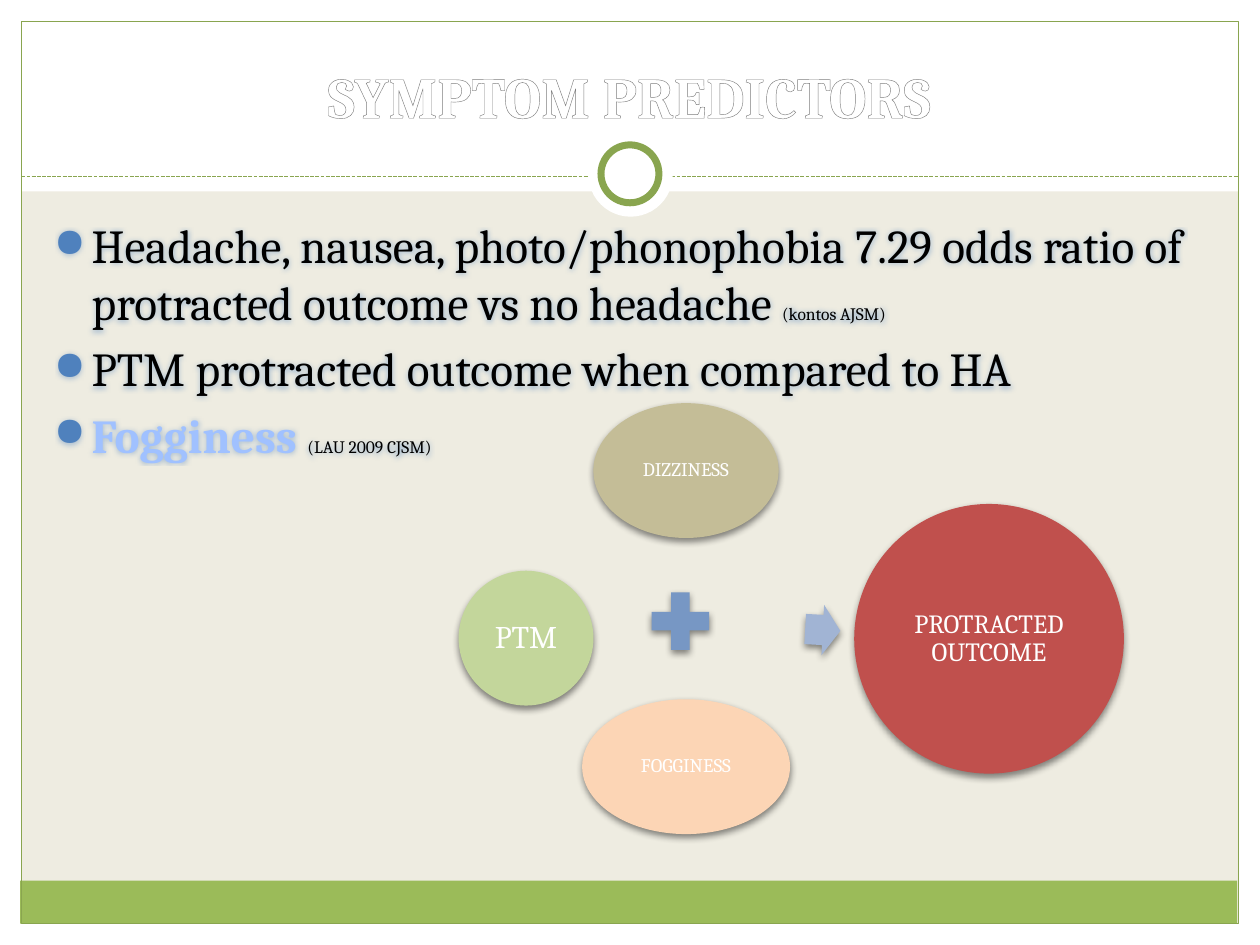
from lxml.etree import SubElement
from pptx import Presentation
from pptx.dml.color import RGBColor
from pptx.enum.dml import MSO_LINE
from pptx.enum.shapes import MSO_CONNECTOR, MSO_SHAPE as SHAPE
from pptx.enum.text import MSO_ANCHOR as ANCHOR, PP_ALIGN as ALIGN
from pptx.oxml.ns import qn
from pptx.util import Inches, Pt

COLORS = {
    "background": "EEECE1", "white": "FFFFFF", "black": "000000",
    "band": "9BBB59", "frame": "89A54F", "bullet": "4F81BD",
    "outline": "7D7D7D", "highlight": "A0C1FF", "glow": "4F81BD",
    "dizziness": "C4BD97", "ptm": "C3D69B", "fogginess": "FCD5B5",
    "plus": "7797C4", "arrow": "A1B4D4", "outcome": "C0504D",
}


def rgb(name):
    return RGBColor.from_string(COLORS[name])


def add_color(parent, name, alpha=None):
    color = SubElement(parent, qn("a:srgbClr"), val=COLORS[name])
    if alpha:
        SubElement(color, qn("a:alpha"), val=str(alpha * 1000))


class SlideBuilder:
    font_name = "Cambria"

    def __init__(self, slide):
        self.slide = slide
        slide.background.fill.solid()
        slide.background.fill.fore_color.rgb = rgb("background")

    def shape(self, kind, box, fill=None, line=None, width=0.75):
        shape = self.slide.shapes.add_shape(kind, *map(Inches, box))
        shape.shadow.inherit = False
        if fill:
            shape.fill.solid()
            shape.fill.fore_color.rgb = rgb(fill)
        else:
            shape.fill.background()
        if line:
            shape.line.color.rgb = rgb(line)
            shape.line.width = Pt(width)
        else:
            shape.line.fill.background()
        return shape

    def dashed_line(self, left, right, y, color):
        line = self.slide.shapes.add_connector(
            MSO_CONNECTOR.STRAIGHT, *map(Inches, (left, y, right, y)))
        line.line.color.rgb = rgb(color)
        line.line.width = Pt(0.75)
        line.line.dash_style = MSO_LINE.SQUARE_DOT
        SubElement(line._element.spPr, qn("a:effectLst"))

    def diagram_shape(self, kind, box, fill, text="", size=11):
        shape = self.shape(kind, box, fill)
        effects = shape._element.spPr.find(qn("a:effectLst"))
        shadow = SubElement(effects, qn("a:outerShdw"), blurRad=str(Pt(4)),
                            dist=str(Pt(2)), dir="5400000", rotWithShape="0")
        add_color(shadow, "black", 45)
        if text:
            frame = shape.text_frame
            frame.word_wrap = True
            frame.vertical_anchor = ANCHOR.MIDDLE
            frame.margin_left = frame.margin_right = Inches(0.02)
            frame.margin_top = frame.margin_bottom = Inches(0.02)
            paragraph = frame.paragraphs[0]
            paragraph.text = text
            paragraph.alignment = ALIGN.CENTER
            paragraph.line_spacing = 0.9
            self.style(paragraph.font, size, "white")
        return shape

    def style(self, font, size, color, bold=False):
        font.name = self.font_name
        font.size = Pt(size)
        font.bold = bold
        font.color.rgb = rgb(color)

    def text_box(self, box, anchor=ANCHOR.TOP):
        frame = self.slide.shapes.add_textbox(*map(Inches, box)).text_frame
        frame.word_wrap = True
        frame.vertical_anchor = anchor
        return frame

    def title(self, text, box):
        paragraph = self.text_box(box, ANCHOR.BOTTOM).paragraphs[0]
        paragraph.alignment = ALIGN.CENTER
        run = paragraph.add_run()
        run.text = text
        self.style(run.font, 33, "white", True)
        properties = run._r.get_or_add_rPr()
        outline = SubElement(properties, qn("a:ln"), w=str(Pt(0.83)))
        add_color(SubElement(outline, qn("a:solidFill")), "outline")
        properties.insert(0, outline)

    def bullets(self, items, box):
        frame = self.text_box(box)
        for index, runs in enumerate(items):
            paragraph = frame.add_paragraph() if index else frame.paragraphs[0]
            properties = paragraph._p.get_or_add_pPr()
            properties.set("marL", str(Inches(0.3)))
            properties.set("indent", str(Inches(-0.3)))
            add_color(SubElement(properties, qn("a:buClr")), "bullet")
            SubElement(properties, qn("a:buSzPct"), val="85000")
            SubElement(properties, qn("a:buChar"), char="●")
            if index:
                paragraph.space_before = Pt(5.4)
            paragraph.font.name = self.font_name
            for text, size, color, bold in runs:
                run = paragraph.add_run()
                run.text = text
                run.font.size = Pt(size)
                run.font.bold = bold
                run.font.color.rgb = rgb(color)
                effects = SubElement(run._r.get_or_add_rPr(), qn("a:effectLst"))
                glow = SubElement(effects, qn("a:glow"), rad=str(Pt(4)))
                add_color(glow, "glow", 40)
                run.font.name = self.font_name


def main():
    presentation = Presentation()
    presentation.slide_width = Inches(10)
    presentation.slide_height = Inches(7.5)
    builder = SlideBuilder(
        presentation.slides.add_slide(presentation.slide_layouts[6]))

    # White margins, green band and frame
    for margin in ((0, 7.33, 10, 0.17), (0, 0, 10, 1.52),
                   (0, 0, 0.17, 7.5), (9.83, 0, 0.17, 7.5)):
        builder.shape(SHAPE.RECTANGLE, margin, "white")
    builder.shape(SHAPE.RECTANGLE, (0.16, 6.99, 9.66, 0.34), "band")
    builder.shape(SHAPE.RECTANGLE, (0.17, 0.17, 9.66, 7.16), line="frame")

    # Divider with ring
    builder.dashed_line(0.17, 9.83, 1.4, "frame")
    builder.shape(SHAPE.OVAL, (4.67, 1.05, 0.67, 0.67), "white")
    builder.shape(SHAPE.OVAL, (4.77, 1.15, 0.46, 0.46), "white", "frame", 4)

    # Title and bullets
    builder.title("SYMPTOM PREDICTORS", (0.33, 0.25, 9.33, 0.83))
    builder.bullets([
        [("Headache, nausea, photo/phonophobia 7.29 odds ratio of "
          "protracted outcome vs no headache ", 27, "black", False),
         ("(kontos AJSM)", 10, "black", False)],
        [("PTM protracted outcome when compared to HA", 27, "black", False)],
        [("Fogginess ", 27, "highlight", True),
         ("(LAU 2009 CJSM)", 10, "black", False)],
    ], (0.33, 1.67, 9.3, 5))

    # Symptoms leading to the outcome
    for box, fill, text, size in (
            ((4.71, 3.2, 1.47, 1.07), "dizziness", "DIZZINESS", 11),
            ((3.64, 4.53, 1.07, 1.07), "ptm", "PTM", 18),
            ((4.62, 5.55, 1.65, 1.07), "fogginess", "FOGGINESS", 11),
            ((6.78, 4, 2.14, 2.14), "outcome", "PROTRACTED OUTCOME", 15)):
        builder.diagram_shape(SHAPE.OVAL, box, fill, text, size)
    builder.diagram_shape(SHAPE.MATH_PLUS, (5.09, 4.62, 0.62, 0.62), "plus")
    arrow = builder.diagram_shape(
        SHAPE.RIGHT_ARROW, (6.39, 4.8, 0.28, 0.4), "arrow")
    arrow.adjustments[0] = 0.6
    arrow.rotation = 3.1

    presentation.save("out.pptx")


if __name__ == "__main__":
    main()
